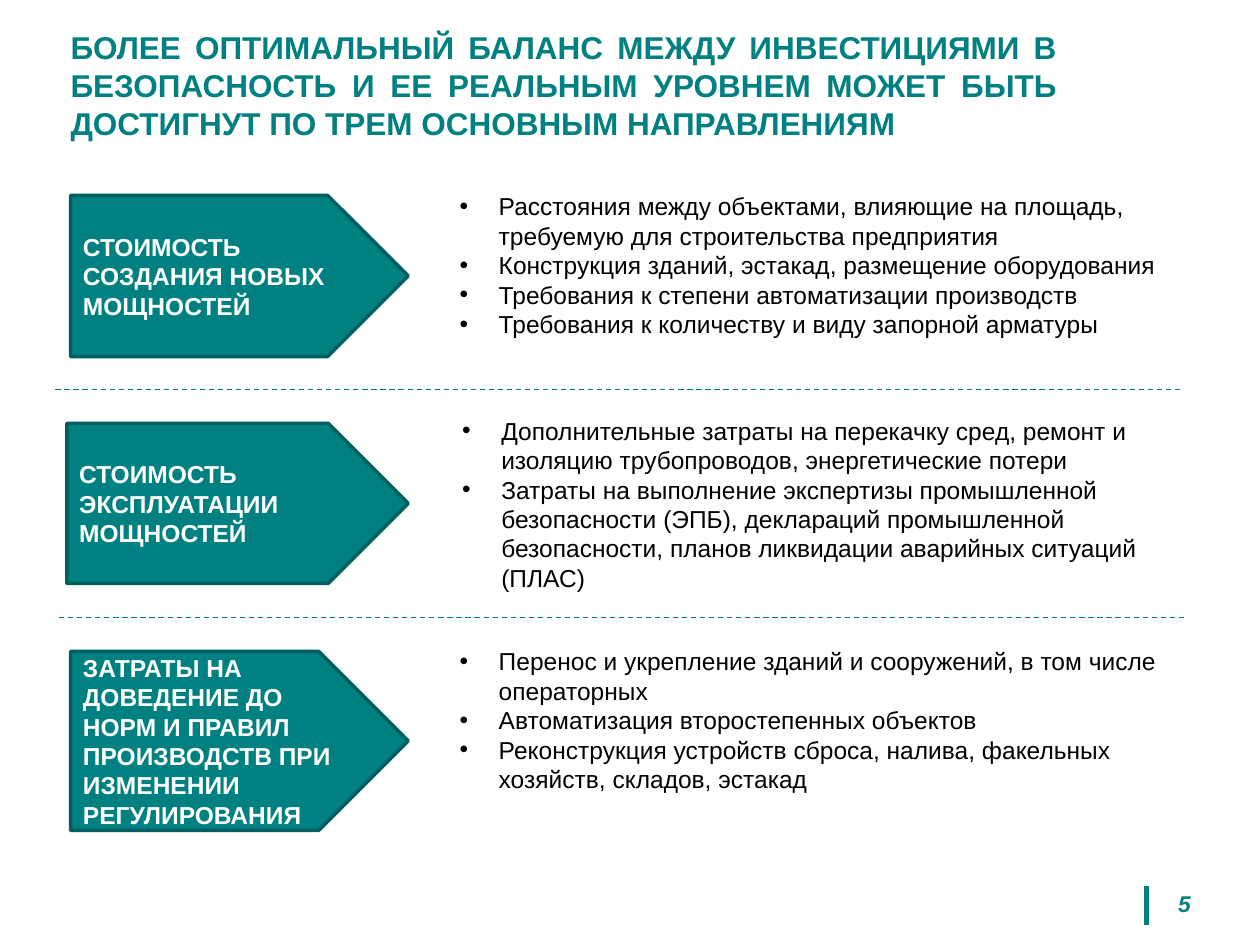
from lxml.etree import SubElement
from pptx import Presentation
from pptx.dml.color import RGBColor
from pptx.enum.dml import MSO_LINE
from pptx.enum.shapes import MSO_CONNECTOR, MSO_SHAPE
from pptx.enum.text import MSO_ANCHOR, MSO_AUTO_SIZE, PP_ALIGN
from pptx.oxml.ns import qn
from pptx.util import Inches, Pt

TEAL = "008080"
BODY = {"name": "Arial", "size": Pt(14)}
HEADING = {"name": "Arial", "size": Pt(18), "bold": True}
LABEL = {"name": "Arial", "size": Pt(14), "bold": True}
NUMBER = {"name": "Arial", "size": Pt(13), "bold": True, "italic": True}

TITLE = ("БОЛЕЕ ОПТИМАЛЬНЫЙ БАЛАНС МЕЖДУ ИНВЕСТИЦИЯМИ В БЕЗОПАСНОСТЬ И ЕЕ "
         "РЕАЛЬНЫМ УРОВНЕМ МОЖЕТ БЫТЬ ДОСТИГНУТ ПО ТРЕМ ОСНОВНЫМ НАПРАВЛЕНИЯМ")

DIRECTIONS = [
    ("СТОИМОСТЬ СОЗДАНИЯ НОВЫХ МОЩНОСТЕЙ", (0.56, 1.55, 2.68, 1.28),
     ["Расстояния между объектами, влияющие на площадь, требуемую для "
      "строительства предприятия",
      "Конструкция зданий, эстакад, размещение оборудования",
      "Требования к степени автоматизации производств",
      "Требования к количеству и виду запорной арматуры"],
     (3.55, 1.47, 6.05, 1.28)),
    ("СТОИМОСТЬ ЭКСПЛУАТАЦИИ МОЩНОСТЕЙ", (0.53, 3.36, 2.71, 1.27),
     ["Дополнительные затраты на перекачку сред, ремонт и изоляцию "
      "трубопроводов, энергетические потери",
      "Затраты на выполнение экспертизы промышленной безопасности (ЭПБ), "
      "деклараций промышленной безопасности, планов ликвидации аварийных "
      "ситуаций (ПЛАС)"],
     (3.57, 3.25, 6.05, 1.51)),
    ("ЗАТРАТЫ НА ДОВЕДЕНИЕ ДО НОРМ И ПРАВИЛ ПРОИЗВОДСТВ ПРИ ИЗМЕНЕНИИ "
     "РЕГУЛИРОВАНИЯ", (0.56, 5.17, 2.68, 1.42),
     ["Перенос и укрепление зданий и сооружений, в том числе операторных",
      "Автоматизация второстепенных объектов",
      "Реконструкция устройств сброса, налива, факельных хозяйств, складов, "
      "эстакад"],
     (3.55, 5.08, 6.05, 1.28)),
]
DIVIDERS = [(0.44, 3.09), (0.47, 4.9)]
DIVIDER_WIDTH = 8.94


def color(value):
    return RGBColor.from_string(value)


def inches(box):
    return [Inches(length) for length in box]


def write(para, text, style, fill, align=PP_ALIGN.LEFT):
    para.alignment = align
    span = para.add_run()
    span.text = text
    for name, value in style.items():
        setattr(span.font, name, value)
    span.font.color.rgb = color(fill)


def add_line(page, start, end, fill, width, dash=None):
    line = page.shapes.add_connector(MSO_CONNECTOR.STRAIGHT, *inches(start + end))
    line.line.color.rgb = color(fill)
    line.line.width = Pt(width)
    if dash:
        line.line.dash_style = dash
    SubElement(line._element.spPr, qn("a:effectLst"))


def add_title(page, box):
    title = page.shapes.title
    title.left, title.top, title.width, title.height = inches(box)
    frame = title.text_frame
    frame.auto_size = MSO_AUTO_SIZE.NONE
    frame.word_wrap = True
    frame.vertical_anchor = MSO_ANCHOR.MIDDLE
    write(frame.paragraphs[0], TITLE, HEADING, TEAL, PP_ALIGN.JUSTIFY)


def add_arrow(page, text, box):
    arrow = page.shapes.add_shape(MSO_SHAPE.PENTAGON, *inches(box))
    arrow.shadow.inherit = False
    arrow.fill.solid()
    arrow.fill.fore_color.rgb = color(TEAL)
    arrow.line.color.rgb = color("005F5F")
    arrow.line.width = Pt(2)
    frame = arrow.text_frame
    frame.word_wrap = True
    frame.vertical_anchor = MSO_ANCHOR.MIDDLE
    write(frame.paragraphs[0], text, LABEL, "FFFFFF")


def add_bullets(page, items, box):
    frame = page.shapes.add_textbox(*inches(box)).text_frame
    frame.word_wrap = True
    frame.auto_size = MSO_AUTO_SIZE.SHAPE_TO_FIT_TEXT
    for index, item in enumerate(items):
        para = frame.add_paragraph() if index else frame.paragraphs[0]
        properties = para._p.get_or_add_pPr()
        properties.set("marL", str(Inches(0.31)))
        properties.set("indent", str(-Inches(0.31)))
        SubElement(properties, qn("a:buFont"), typeface="Arial")
        SubElement(properties, qn("a:buChar"), char="•")
        write(para, item, BODY, "000000")


def add_page_number(page, box):
    left, top, width, height = box
    add_line(page, (left - 0.03, top + 0.02), (left - 0.03, top + 0.33), TEAL, 3)
    frame = page.shapes.add_textbox(*inches(box)).text_frame
    frame.word_wrap = True
    write(frame.paragraphs[0], "5", NUMBER, TEAL, PP_ALIGN.CENTER)


def main():
    deck = Presentation()
    deck.slide_width, deck.slide_height = Inches(10), Inches(7.5)
    page = deck.slides.add_slide(deck.slide_layouts[5])
    add_title(page, (0.46, 0.23, 8.03, 0.89))
    for label, arrow_box, items, list_box in DIRECTIONS:
        add_arrow(page, label, arrow_box)
        add_bullets(page, items, list_box)
    for left, top in DIVIDERS:
        add_line(page, (left, top), (left + DIVIDER_WIDTH, top),
                 "007D7D", 0.75, MSO_LINE.DASH)
    add_page_number(page, (9.13, 7.01, 0.54, 0.34))
    deck.save("out.pptx")


if __name__ == "__main__":
    main()
